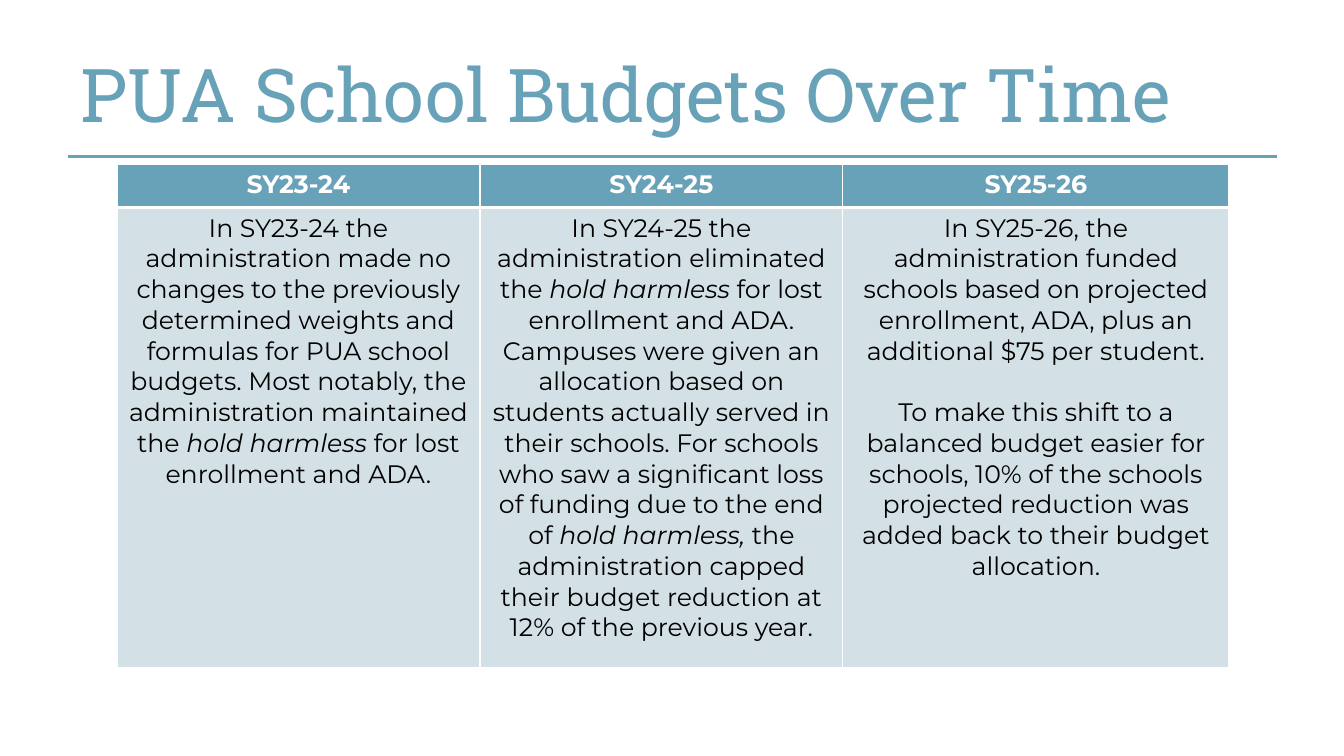
from dataclasses import dataclass

from lxml.etree import SubElement
from pptx import Presentation
from pptx.dml.color import RGBColor
from pptx.enum.text import MSO_ANCHOR, MSO_AUTO_SIZE, PP_ALIGN
from pptx.oxml import parse_xml
from pptx.oxml.ns import nsdecls, qn
from pptx.slide import Slide
from pptx.table import _Cell
from pptx.text.text import _Paragraph
from pptx.util import Inches, Pt

COLORS = {"teal": "67A2B9", "pale": "D3E0E6", "white": "FFFFFF", "black": "000000"}
TITLE_FONT = "Roboto Slab"
BODY_FONT = "Montserrat"
BLANK_LINE = Pt(22)


@dataclass(frozen=True)
class Part:
    text: str
    italic: bool = False


@dataclass(frozen=True)
class SchoolYear:
    label: str
    width: float
    paragraphs: list[list[Part]]


HOLD_HARMLESS = Part("hold harmless", italic=True)

SCHOOL_YEARS = [
    SchoolYear("SY23-24", 3.6, [[
        Part("In SY23-24 the administration made no changes to the previously "
             "determined weights and formulas for PUA school budgets. Most notably, "
             "the administration maintained the "),
        HOLD_HARMLESS,
        Part(" for lost enrollment and ADA."),
    ]]),
    SchoolYear("SY24-25", 3.6, [[
        Part("In SY24-25 the administration eliminated the "),
        HOLD_HARMLESS,
        Part(" for lost enrollment and ADA. Campuses were given an allocation based "
             "on students actually served in their schools. For schools who saw a "
             "significant loss of funding due to the end of "),
        Part("hold harmless, ", italic=True),
        Part("the administration capped their budget reduction at 12% of the "
             "previous year."),
    ]]),
    SchoolYear("SY25-26", 3.83, [
        [Part("In SY25-26, the administration funded schools based on projected "
              "enrollment, ADA, plus an additional $75 per student.")],
        [Part("To make this shift to a balanced budget easier for schools, 10% of "
              "the schools projected reduction was added back to their budget "
              "allocation.")],
    ]),
]


def color(name: str) -> RGBColor:
    return RGBColor.from_string(COLORS[name])


def add_run(paragraph: _Paragraph, part: Part, font: str, size: float,
            color_name: str, bold: bool = False) -> None:
    run = paragraph.add_run()
    run.text = part.text
    run.font.name = font
    run.font.size = Pt(size)
    run.font.bold = bold
    run.font.italic = part.italic
    run.font.color.rgb = color(color_name)


def set_borders(cell: _Cell, top: int, bottom: int) -> None:
    """Draw white cell borders, with widths in points."""
    properties = cell._tc.get_or_add_tcPr()
    widths = {"lnL": 1, "lnR": 1, "lnT": top, "lnB": bottom}
    for position, (tag, width) in enumerate(widths.items()):
        border = parse_xml(
            f'<a:{tag} {nsdecls("a")} w="{Pt(width)}"><a:solidFill>'
            f'<a:srgbClr val="{COLORS["white"]}"/></a:solidFill></a:{tag}>')
        properties.insert(position, border)


def fill_cell(cell: _Cell, paragraphs: list[list[Part]], fill: str,
              text_color: str, bold: bool) -> None:
    cell.fill.solid()
    cell.fill.fore_color.rgb = color(fill)
    frame = cell.text_frame
    for index, parts in enumerate(paragraphs):
        paragraph = frame.add_paragraph() if index else frame.paragraphs[0]
        paragraph.alignment = PP_ALIGN.CENTER
        if index:
            paragraph.space_before = BLANK_LINE
        for part in parts:
            add_run(paragraph, part, BODY_FONT, 18, text_color, bold)


def add_title(slide: Slide, text: str) -> None:
    title = slide.shapes.title
    title.left, title.top = Inches(0.67), Inches(0.3)
    title.width, title.height = Inches(12), Inches(1.25)
    frame = title.text_frame
    frame.auto_size = MSO_AUTO_SIZE.NONE
    frame.word_wrap = True
    frame.vertical_anchor = MSO_ANCHOR.MIDDLE
    frame.margin_left = frame.margin_right = Inches(0.13)
    frame.margin_top = frame.margin_bottom = Inches(0.07)
    paragraph = frame.paragraphs[0]
    paragraph.alignment = PP_ALIGN.LEFT
    add_run(paragraph, Part(text), TITLE_FONT, 53, "teal")


def add_title_rule(slide: Slide) -> None:
    rule = slide.shapes.add_connector(
        1, Inches(0.67), Inches(1.55), Inches(12.67), Inches(1.55))
    rule.line.color.rgb = color("teal")
    rule.line.width = Pt(2)
    SubElement(rule._element.spPr, qn("a:effectLst"))


def add_budget_table(slide: Slide, years: list[SchoolYear]) -> None:
    table = slide.shapes.add_table(
        2, len(years), Inches(1.16), Inches(1.63), Inches(11.03), Inches(4.99)).table
    table.horz_banding = False
    table.rows[0].height = Inches(0.43)
    table.rows[1].height = Inches(4.56)
    for index, year in enumerate(years):
        table.columns[index].width = Inches(year.width)
        header, body = table.cell(0, index), table.cell(1, index)
        fill_cell(header, [[Part(year.label)]], "teal", "white", bold=True)
        fill_cell(body, year.paragraphs, "pale", "black", bold=False)
        set_borders(header, top=1, bottom=3)
        set_borders(body, top=3, bottom=1)


def main() -> None:
    presentation = Presentation()
    presentation.slide_width = Inches(13.33)
    presentation.slide_height = Inches(7.5)
    slide = presentation.slides.add_slide(presentation.slide_layouts[5])

    # Heading and the rule below it
    add_title(slide, "PUA School Budgets Over Time")
    add_title_rule(slide)

    # One column per school year
    add_budget_table(slide, SCHOOL_YEARS)

    presentation.save("out.pptx")


if __name__ == "__main__":
    main()
